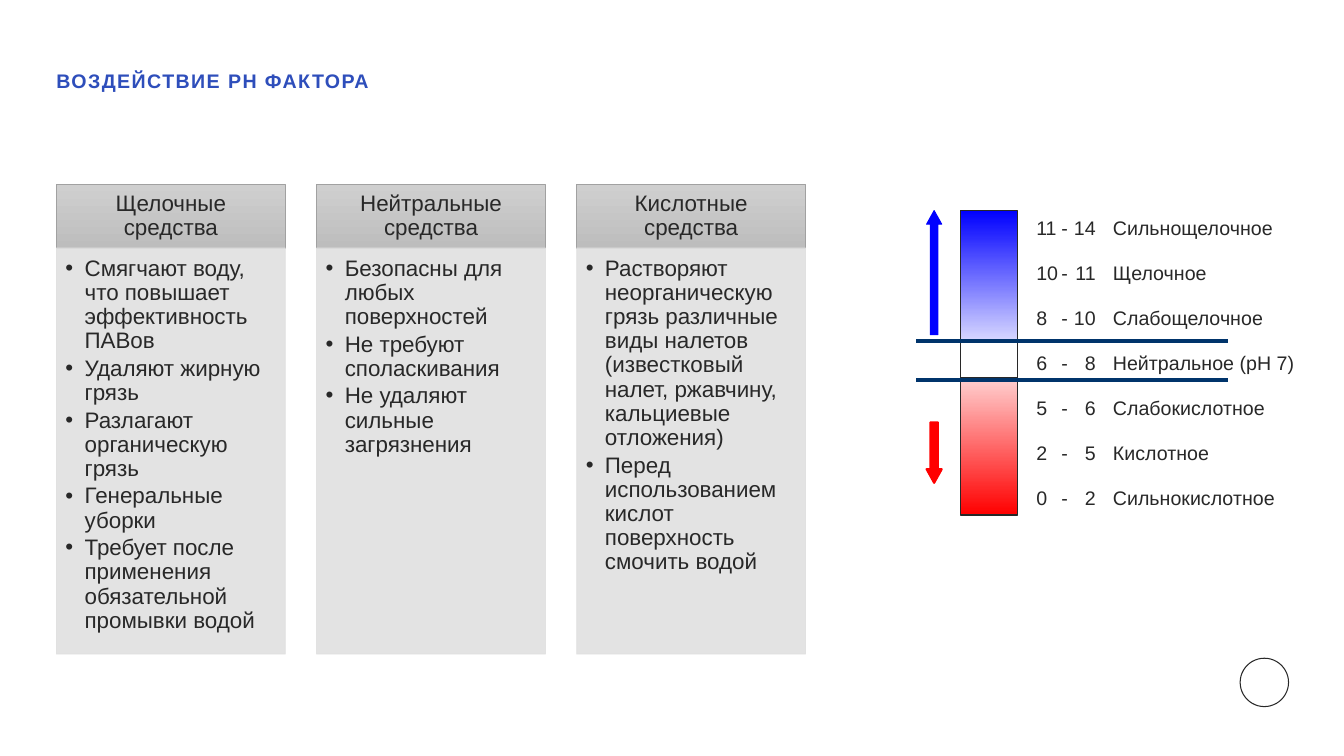
from lxml.etree import SubElement
from pptx import Presentation
from pptx.dml.color import RGBColor
from pptx.enum.shapes import MSO_CONNECTOR, MSO_SHAPE
from pptx.enum.text import MSO_ANCHOR, PP_ALIGN
from pptx.oxml.ns import qn
from pptx.util import Inches, Pt

COLUMNS = [
    ("Щелочные средства", [
        "Смягчают воду, что повышает эффективность ПАВов",
        "Удаляют жирную грязь",
        "Разлагают органическую грязь",
        "Генеральные уборки",
        "Требует после применения обязательной промывки водой",
    ]),
    ("Нейтральные средства", [
        "Безопасны для любых поверхностей",
        "Не требуют споласкивания",
        "Не удаляют сильные загрязнения",
    ]),
    ("Кислотные средства", [
        "Растворяют неорганическую грязь различные виды налетов "
        "(известковый налет, ржавчину, кальциевые отложения)",
        "Перед использованием кислот поверхность смочить водой",
    ]),
]
SCALE = [
    (11, 14, "Сильнощелочное"),
    (10, 11, "Щелочное"),
    (8, 10, "Слабощелочное"),
    (6, 8, "Нейтральное (pH 7)"),
    (5, 6, "Слабокислотное"),
    (2, 5, "Кислотное"),
    (0, 2, "Сильнокислотное"),
]
SCALE_TABS = [(0.25, "l"), (0.59, "r"), (0.76, "l")]


def color(value):
    return RGBColor.from_string(value)


class SlideBuilder:
    font = "Arial"
    ink = "282828"

    def __init__(self, slide):
        self.slide = slide

    def shape(self, kind, area, fill=None, line=None, width=0.75, opacity=None, head=None):
        shape = self.slide.shapes.add_shape(kind, *map(Inches, area))
        shape.shadow.inherit = False
        if fill is None:
            shape.fill.background()
        elif isinstance(fill, tuple):
            shape.fill.gradient()
            shape.fill.gradient_angle = 270
            for stop, value in zip(shape.fill.gradient_stops, fill):
                stop.color.rgb = color(value)
        else:
            shape.fill.solid()
            shape.fill.fore_color.rgb = color(fill)
        shape.line.color.rgb = color(line or self.ink)
        shape.line.width = Pt(width)
        if opacity:
            for element in shape._element.spPr.iter(qn("a:srgbClr")):
                SubElement(element, qn("a:alpha")).set("val", str(opacity * 1000))
        if head:
            shape.adjustments[0] = 0.5
            shape.adjustments[1] = head
        return shape

    def line(self, left, right, top, value, width):
        ends = map(Inches, (left, top, right, top))
        line = self.slide.shapes.add_connector(MSO_CONNECTOR.STRAIGHT, *ends)
        line.line.color.rgb = color(value)
        line.line.width = Pt(width)
        SubElement(line._element.spPr, qn("a:effectLst"))

    def textbox(self, area):
        return self.slide.shapes.add_textbox(*map(Inches, area))

    def text(self, box, lines, margins=(0.1, 0.05, 0.1, 0.05), anchor=MSO_ANCHOR.TOP,
             paragraph=None, font=None, bullets=False, tabs=(), spacing=None):
        frame = box.text_frame
        frame.word_wrap = True
        frame.vertical_anchor = anchor
        for side, margin in zip(("left", "top", "right", "bottom"), margins):
            setattr(frame, f"margin_{side}", Inches(margin))
        for index, words in enumerate(lines):
            para = frame.paragraphs[0] if index == 0 else frame.add_paragraph()
            properties = para._p.get_or_add_pPr()
            if bullets:
                properties.set("marL", str(Inches(0.19)))
                properties.set("indent", str(Inches(-0.19)))
                SubElement(properties, qn("a:buFont")).set("typeface", self.font)
                SubElement(properties, qn("a:buChar")).set("char", "•")
            if tabs:
                tab_list = SubElement(properties, qn("a:tabLst"))
                for position, alignment in tabs:
                    tab = SubElement(tab_list, qn("a:tab"))
                    tab.set("pos", str(Inches(position)))
                    tab.set("algn", alignment)
            for name, value in {"alignment": PP_ALIGN.LEFT, **(paragraph or {})}.items():
                setattr(para, name, value)
            if index and "space_before" not in (paragraph or {}) and tabs:
                para.space_before = Pt(12)
            span = para.add_run()
            span.text = words
            for name, value in {"name": self.font, "size": Pt(16), **(font or {})}.items():
                setattr(span.font, name, value)
            span.font.color.rgb = color(self.ink)
            if spacing:
                span._r.get_or_add_rPr().set("spc", str(spacing))
        return frame

    def title(self, words):
        frame = self.text(self.textbox((0.56, 0.48, 10.16, 0.65)), [words], (0, 0, 0, 0),
                          MSO_ANCHOR.MIDDLE, font={"size": Pt(14), "bold": True}, spacing=100)
        frame.paragraphs[0].runs[0].font.color.rgb = color("2E4EBB")

    def column(self, left, heading, points):
        header = self.shape(MSO_SHAPE.RECTANGLE, (left, 1.83, 2.27, 0.63),
                            ("CFCFCF", "BDBDBD"), "A1A1A1", 0.5)
        self.text(header, [heading], (0.12, 0.07, 0.12, 0.07), MSO_ANCHOR.MIDDLE,
                  {"alignment": PP_ALIGN.CENTER, "line_spacing": 0.9})
        body = self.shape(MSO_SHAPE.RECTANGLE, (left, 2.46, 2.27, 4.03),
                          "E0E0E0", "E0E0E0", 0.5, opacity=90)
        self.text(body, points, (0.09, 0.09, 0.12, 0.14),
                  paragraph={"line_spacing": 0.9, "space_after": Pt(2.4)}, bullets=True)

    def scale(self):
        self.shape(MSO_SHAPE.RECTANGLE, (9.53, 3.34, 0.56, 0.41), "FFFFFF")
        self.shape(MSO_SHAPE.DOWN_ARROW, (9.19, 4.19, 0.15, 0.6), "FF0000", "FF0000", 1.5, head=0.9)
        self.shape(MSO_SHAPE.UP_ARROW, (9.19, 2.09, 0.15, 1.23), "0000FF", "0000FF", head=0.9)
        self.shape(MSO_SHAPE.RECTANGLE, (9.53, 2.09, 0.56, 1.3), ("0000FF", "D8D8FF"))
        self.shape(MSO_SHAPE.RECTANGLE, (9.53, 3.75, 0.56, 1.36), ("FFD0D0", "FF0000"))
        for top in (3.77, 3.38):
            self.line(9.09, 12.18, top, "00346B", 3)
        labels = [f"{low}\t-\t{high}\t{name}" for low, high, name in SCALE]
        self.text(self.textbox((10.18, 2.05, 2.87, 4.17)), labels,
                  paragraph={"line_spacing": 1.2}, font={"size": Pt(14)}, tabs=SCALE_TABS)


def main():
    deck = Presentation()
    deck.slide_width = Inches(13.33)
    deck.slide_height = Inches(7.5)
    page = SlideBuilder(deck.slides.add_slide(deck.slide_layouts[6]))
    page.shape(MSO_SHAPE.OVAL, (12.3, 6.53, 0.48, 0.48))
    for index, (heading, points) in enumerate(COLUMNS):
        page.column(0.56 + 2.58 * index, heading, points)
    page.title("ВОЗДЕЙСТВИЕ PH ФАКТОРА")
    page.scale()
    deck.save("out.pptx")


if __name__ == "__main__":
    main()
